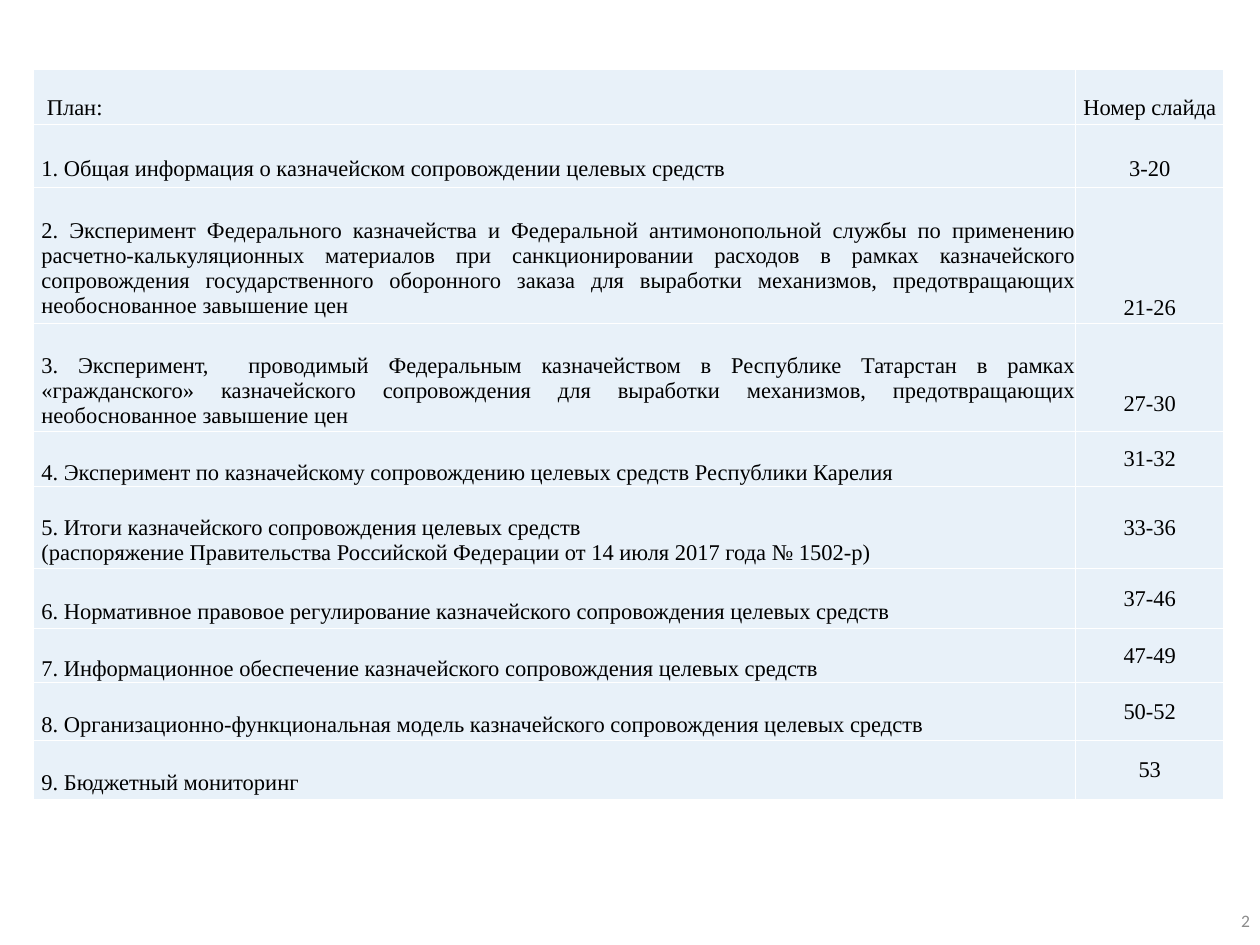
import lxml.etree
import pptx
import pptx.dml.color
import pptx.enum.text
import pptx.oxml.ns
import pptx.util

Inches = pptx.util.Inches
Align = pptx.enum.text.PP_ALIGN
Anchor = pptx.enum.text.MSO_ANCHOR

LINE_HEIGHT = 0.29
COLUMN_WIDTHS = (11.58, 1.65)

# Row height, topic, slide numbers, lines left free above the numbers
PLAN = [
    (0.61, "План:", "Номер слайда", 1),
    (0.7, "1. Общая информация о казначейском сопровождении целевых средств", "3-20", 1),
    (1.52, "2. Эксперимент Федерального казначейства и Федеральной антимонопольной службы "
           "по применению расчетно-калькуляционных материалов при санкционировании расходов "
           "в рамках казначейского сопровождения государственного оборонного заказа "
           "для выработки механизмов, предотвращающих необоснованное завышение цен", "21-26", 4),
    (1.2, "3. Эксперимент,  проводимый Федеральным казначейством в Республике Татарстан "
          "в рамках «гражданского» казначейского сопровождения для выработки механизмов, "
          "предотвращающих необоснованное завышение цен", "27-30", 2),
    (0.61, "4. Эксперимент по казначейскому сопровождению целевых средств Республики Карелия",
     "31-32", 0),
    (0.91, "5. Итоги казначейского сопровождения целевых средств\n"
           "(распоряжение Правительства Российской Федерации от 14 июля 2017 года № 1502-р)",
     "33-36", 0),
    (0.66, "6. Нормативное правовое регулирование казначейского сопровождения целевых средств",
     "37-46", 0),
    (0.61, "7. Информационное обеспечение казначейского сопровождения целевых средств",
     "47-49", 0),
    (0.64, "8. Организационно-функциональная модель казначейского сопровождения целевых средств",
     "50-52", 0),
    (0.66, "9. Бюджетный мониторинг", "53", 0),
]


def color(value):
    """Turn a hex string into a colour."""
    return pptx.dml.color.RGBColor.from_string(value)


def style_text(text_frame, font_name, size, font_color, alignment):
    """Set the font and alignment of every paragraph."""
    for paragraph in text_frame.paragraphs:
        paragraph.alignment = alignment
        paragraph.font.name = font_name
        paragraph.font.size = pptx.util.Pt(size)
        paragraph.font.color.rgb = color(font_color)


def paint_cell(cell, fill_color, opacity, border_color):
    """Give a cell a translucent fill and a thin border on all sides."""
    qn = pptx.oxml.ns.qn
    cell.fill.solid()
    cell.fill.fore_color.rgb = color(fill_color)
    properties = cell._tc.get_or_add_tcPr()
    fill = properties.find(qn("a:solidFill"))
    lxml.etree.SubElement(fill[0], qn("a:alpha"), val=str(opacity * 1000))
    for side in ("L", "R", "T", "B"):
        border = lxml.etree.Element(qn(f"a:ln{side}"), w=str(pptx.util.Pt(1)))
        border_fill = lxml.etree.SubElement(border, qn("a:solidFill"))
        lxml.etree.SubElement(border_fill, qn("a:srgbClr"), val=border_color)
        fill.addprevious(border)


def fill_cell(cell, text, alignment, anchor, left, free_lines):
    """Write one table cell, with free lines kept above its text."""
    cell.margin_left = Inches(left)
    cell.margin_right = cell.margin_bottom = 0
    cell.margin_top = Inches(free_lines * LINE_HEIGHT)
    cell.vertical_anchor = anchor
    cell.text_frame.text = text
    style_text(cell.text_frame, "Times New Roman", 18, "000000", alignment)
    paint_cell(cell, "DEEBF7", 69, "FFFFFF")


def add_plan(slide, left, top, width, height):
    """Add the table of topics and slide numbers."""
    table = slide.shapes.add_table(
        len(PLAN), len(COLUMN_WIDTHS),
        Inches(left), Inches(top), Inches(width), Inches(height)).table
    table.first_row = table.horz_banding = False
    for column, share in zip(table.columns, COLUMN_WIDTHS):
        column.width = Inches(width * share / sum(COLUMN_WIDTHS))
    total = sum(entry[0] for entry in PLAN)
    for index, (row_height, topic, numbers, free_lines) in enumerate(PLAN):
        header = index == 0
        anchor = Anchor.TOP if header else Anchor.MIDDLE
        table.rows[index].height = Inches(height * row_height / total)
        fill_cell(table.cell(index, 0), topic, Align.LEFT if header else Align.JUSTIFY,
                  anchor, 0.15 if header else 0.09, 1)
        fill_cell(table.cell(index, 1), numbers, Align.CENTER, anchor, 0, free_lines)


def add_slide_number(slide, left, top, width, height):
    """Add the slide number at the right of its box."""
    box = slide.shapes.add_textbox(Inches(left), Inches(top), Inches(width), Inches(height))
    text_frame = box.text_frame
    text_frame.word_wrap = True
    text_frame.vertical_anchor = Anchor.MIDDLE
    text_frame.margin_left = text_frame.margin_right = Inches(0.12)
    text_frame.margin_top = text_frame.margin_bottom = Inches(0.06)
    text_frame.text = "2"
    style_text(text_frame, "Calibri", 14, "8C8C8C", Align.RIGHT)


def main():
    """Build and save the presentation."""
    presentation = pptx.Presentation()
    presentation.slide_width = Inches(14)
    presentation.slide_height = Inches(10.5)
    slide = presentation.slides.add_slide(presentation.slide_layouts[6])
    add_plan(slide, 0.37, 0.77, 13.23, 8.12)
    add_slide_number(slide, 10.86, 9.95, 3.15, 0.56)
    presentation.save("out.pptx")


if __name__ == "__main__":
    main()
